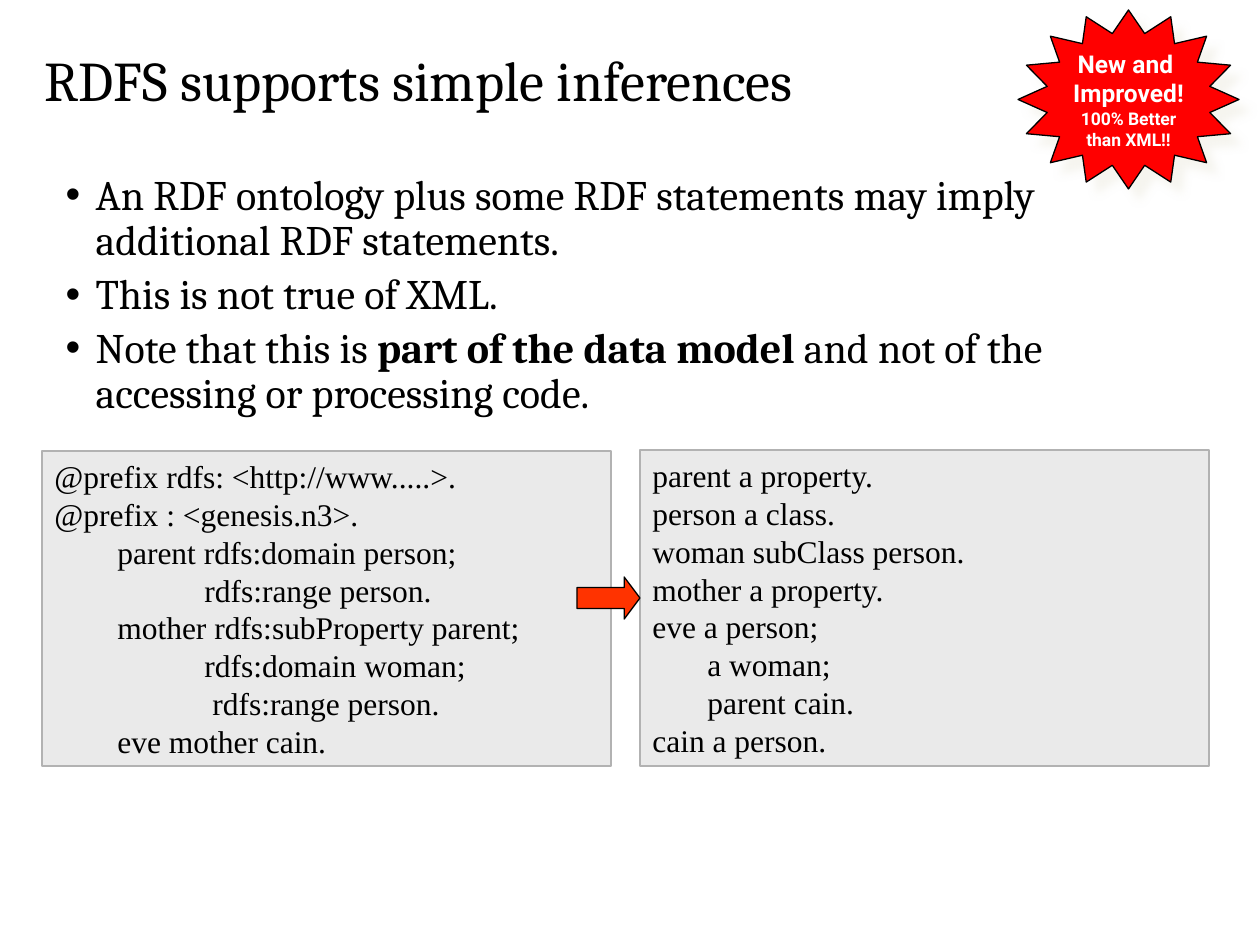
from lxml import etree
from pptx import Presentation, util as u
from pptx.dml.color import RGBColor
from pptx.enum import shapes, text
from pptx.oxml import ns

# Content
TITLE = "RDFS supports simple inferences"
BULLETS = [  # runs of (text, bold)
    [("An RDF ontology plus some RDF statements may imply additional RDF statements.", False)],
    [("This is not true of XML.", False)],
    [("Note that this is ", False), ("part of the data model", True),
     (" and not of the accessing or processing code.", False)],
]
PANELS = [  # box in px, then lines of (indent in px, text)
    ((42, 451, 569, 315), [
        (0, "@prefix rdfs: <http://www.....>."),
        (0, "@prefix : <genesis.n3>."),
        (63, "parent rdfs:domain person;"),
        (150, "rdfs:range person."),
        (63, "mother rdfs:subProperty parent;"),
        (150, "rdfs:domain woman;"),
        (158, "rdfs:range person."),
        (63, "eve mother cain."),
    ]),
    ((640, 450, 569, 316), [
        (0, "parent a property."),
        (0, "person a class."),
        (0, "woman subClass person."),
        (0, "mother a property."),
        (0, "eve a person;"),
        (55, "a woman;"),
        (55, "parent cain."),
        (0, "cain a person."),
    ]),
]
BADGE = [(14, ["New and ", "Improved!"]), (10, ["100% Better", "than XML!!"])]

# Formats
COLORS = {"ink": "000000", "panel": "EAEAEA", "edge": "B2B2B2", "arrow": "FF3300",
          "star": "FF0000", "white": "FFFFFF", "shadow": "EEECE1"}
TITLE_FONT = {"name": "Cambria", "size": u.Pt(32), "bold": False}
BODY_FONT = {"name": "Cambria", "size": u.Pt(24)}
CODE_FONT = {"name": "Times New Roman", "size": u.Pt(18)}
BADGE_FONT = {"name": "Roboto", "bold": True}


def px(n):
    return u.Emu(round(n * 914400 / 126))


def rgb(name):
    return RGBColor.from_string(COLORS[name])


def add_run(p, words, font, color="ink", **extra):
    r = p.add_run()
    r.text = words
    for key, value in {**font, **extra}.items():
        setattr(r.font, key, value)
    r.font.color.rgb = rgb(color)


def place(sp, box):
    sp.left, sp.top, sp.width, sp.height = map(px, box)


def set_frame(sp, anchor, wrap=True):
    tf = sp.text_frame
    tf.auto_size = text.MSO_AUTO_SIZE.NONE
    tf.word_wrap, tf.vertical_anchor = wrap, anchor
    return tf


def paragraphs(tf, items):
    for i, item in enumerate(items):
        yield (tf.add_paragraph() if i else tf.paragraphs[0]), item


def indent(p, left, first=0):
    pPr = p._p.get_or_add_pPr()
    pPr.set("marL", str(px(left)))
    pPr.set("indent", str(px(first)))


def add_shape(s, kind, box, fill, line):
    sp = s.shapes.add_shape(kind, *map(px, box))
    sp.shadow.inherit = False
    sp.fill.solid()
    sp.fill.fore_color.rgb = rgb(fill)
    sp.line.color.rgb = rgb(line)
    sp.line.width = u.Pt(0.75)
    return sp


def add_shadow(sp):
    effects = sp._element.spPr.find(ns.qn("a:effectLst"))
    shadow = etree.SubElement(effects, ns.qn("a:outerShdw"), blurRad=str(u.Pt(5)),
                              dist=str(u.Pt(8.5)), dir="2700000", algn="ctr", rotWithShape="0")
    color = etree.SubElement(shadow, ns.qn("a:srgbClr"), val=COLORS["shadow"])
    etree.SubElement(color, ns.qn("a:alpha"), val="50000")


def main():
    prs = Presentation()
    prs.slide_width, prs.slide_height = px(1260), px(945)
    s = prs.slides.add_slide(prs.slide_layouts[1])
    title, body = s.placeholders

    # Title
    place(title, (32, 21, 998, 116))
    p = set_frame(title, text.MSO_ANCHOR.MIDDLE).paragraphs[0]
    p.alignment = text.PP_ALIGN.LEFT
    add_run(p, TITLE, TITLE_FONT)

    # Bullet list
    place(body, (53, 168, 1155, 273))
    tf = set_frame(body, text.MSO_ANCHOR.TOP)
    for p, runs in paragraphs(tf, BULLETS):
        p.line_spacing = 0.9
        indent(p, 30, -30)
        for words, bold in runs:
            add_run(p, words, BODY_FONT, bold=bold)

    # Statement panels
    for box, lines in PANELS:
        sp = add_shape(s, shapes.MSO_SHAPE.RECTANGLE, box, "panel", "edge")
        tf = set_frame(sp, text.MSO_ANCHOR.TOP)
        for p, (left, words) in paragraphs(tf, lines):
            p.alignment = text.PP_ALIGN.LEFT
            indent(p, left)
            add_run(p, words, CODE_FONT)

    # Arrow between the panels
    arrow = add_shape(s, shapes.MSO_SHAPE.RIGHT_ARROW, (577, 577, 63, 42), "arrow", "ink")
    arrow.adjustments[0], arrow.adjustments[1] = 0.5, 0.375

    # Star badge
    star = add_shape(s, shapes.MSO_SHAPE.STAR_16_POINT, (1018, 10, 221, 179), "star", "ink")
    star.adjustments[0] = 0.375
    add_shadow(star)
    tf = set_frame(star, text.MSO_ANCHOR.MIDDLE, wrap=False)
    for p, (size, lines) in paragraphs(tf, BADGE):
        p.alignment = text.PP_ALIGN.CENTER
        for i, words in enumerate(lines):
            if i:
                p.add_line_break()
            add_run(p, words, BADGE_FONT, "white", size=u.Pt(size))

    prs.save("out.pptx")


if __name__ == "__main__":
    main()
